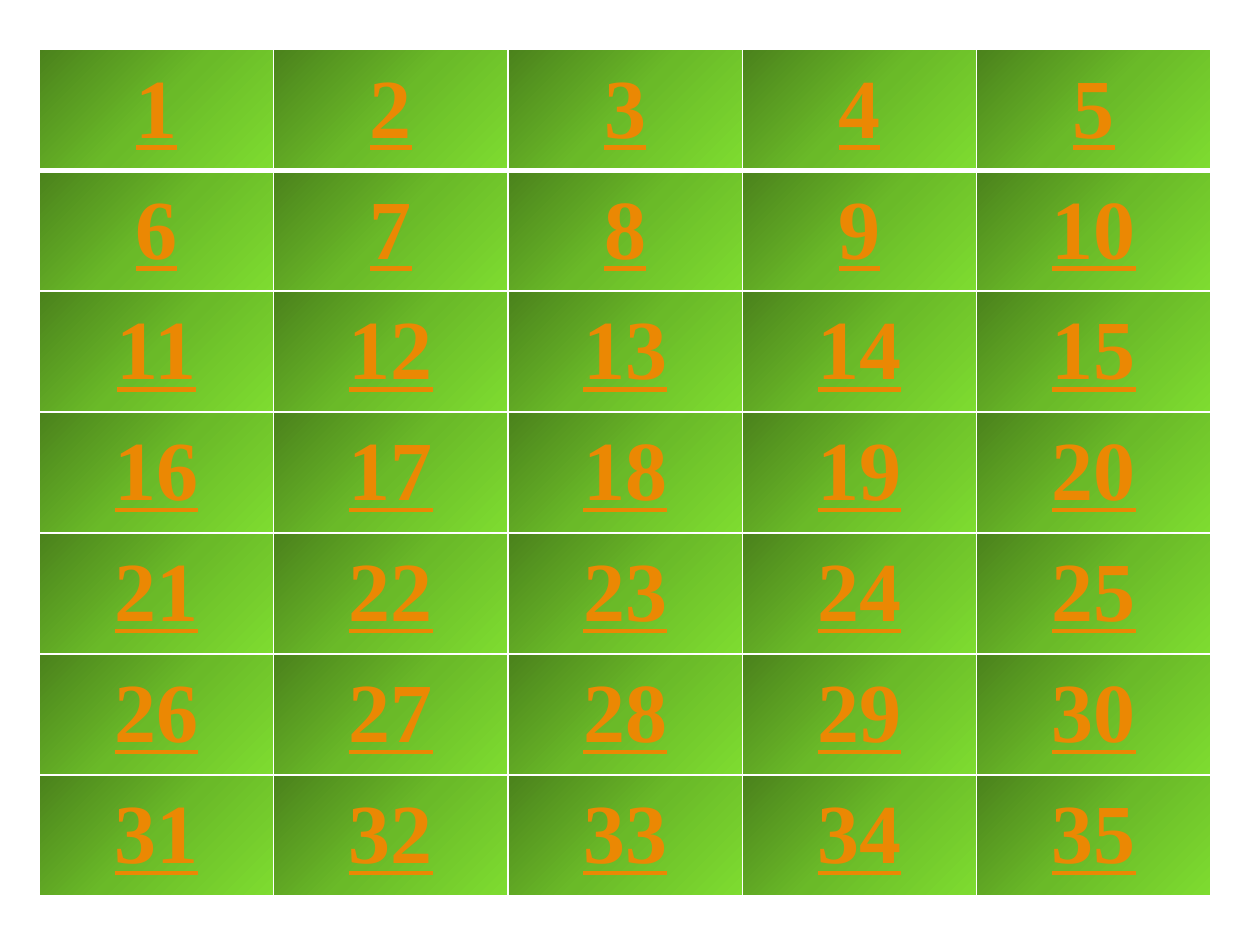
import pptx
import pptx.dml.color
import pptx.enum.text
import pptx.oxml
import pptx.oxml.ns
import pptx.util

Pt = pptx.util.Pt
COLORS = {"dark": "4B821C", "mid": "6ABA28", "light": "7EDC30",
          "digit": "EB8803", "rule": "FFFFFF"}
STOPS = {0: "dark", 50: "mid", 100: "light"}
FONT = {"name": "Times New Roman", "size": Pt(48), "bold": True, "underline": True}
COLS, ROWS = 5, 7


def add_xml(props, body):
    tag, rest = body.split(" ", 1)
    names = pptx.oxml.ns.nsdecls("a")
    props.append(pptx.oxml.parse_xml(f"<a:{tag} {names} {rest}</a:{tag}>"))


def paint(cell, top, base):
    """Give a cell its borders, then its diagonal gradient."""
    props = cell._tc.get_or_add_tcPr()
    for side, width in {"L": 1, "R": 1, "T": top, "B": base}.items():
        add_xml(props, f'ln{side} w="{Pt(width)}"><a:solidFill>'
                       f'<a:srgbClr val="{COLORS["rule"]}"/></a:solidFill>')
    stops = "".join(f'<a:gs pos="{place * 1000}"><a:srgbClr val="{COLORS[key]}"/></a:gs>'
                    for place, key in STOPS.items())
    add_xml(props, f'gradFill rotWithShape="1"><a:gsLst>{stops}</a:gsLst>'
                   '<a:lin ang="2700000" scaled="0"/>')


def write(cell, text):
    cell.vertical_anchor = pptx.enum.text.MSO_ANCHOR.MIDDLE
    para = cell.text_frame.paragraphs[0]
    para.alignment = pptx.enum.text.PP_ALIGN.CENTER
    run = para.add_run()
    run.text = text
    for key, value in FONT.items():
        setattr(run.font, key, value)
    run.font.color.rgb = pptx.dml.color.RGBColor.from_string(COLORS["digit"])


def add_board(slide, left, top, width, height):
    """Place the grid of numbers, counted row by row."""
    box = [Pt(size) for size in (left, top, width, height)]
    table = slide.shapes.add_table(ROWS, COLS, *box).table
    table.first_row = table.horz_banding = False
    for col in table.columns:
        col.width = Pt(width / COLS)
    for row in table.rows:
        row.height = Pt(height / ROWS)
    for index, cell in enumerate(table.iter_cells()):
        row = index // COLS
        write(cell, str(index + 1))
        paint(cell, 3 if row == 1 else 1, 3 if row == 0 else 1)


def main():
    deck = pptx.Presentation()
    deck.slide_width, deck.slide_height = Pt(720), Pt(540)
    slide = deck.slides.add_slide(deck.slide_layouts[6])
    add_board(slide, 22.5, 28.2, 669.6, 483.84)
    deck.save("out.pptx")


if __name__ == "__main__":
    main()
